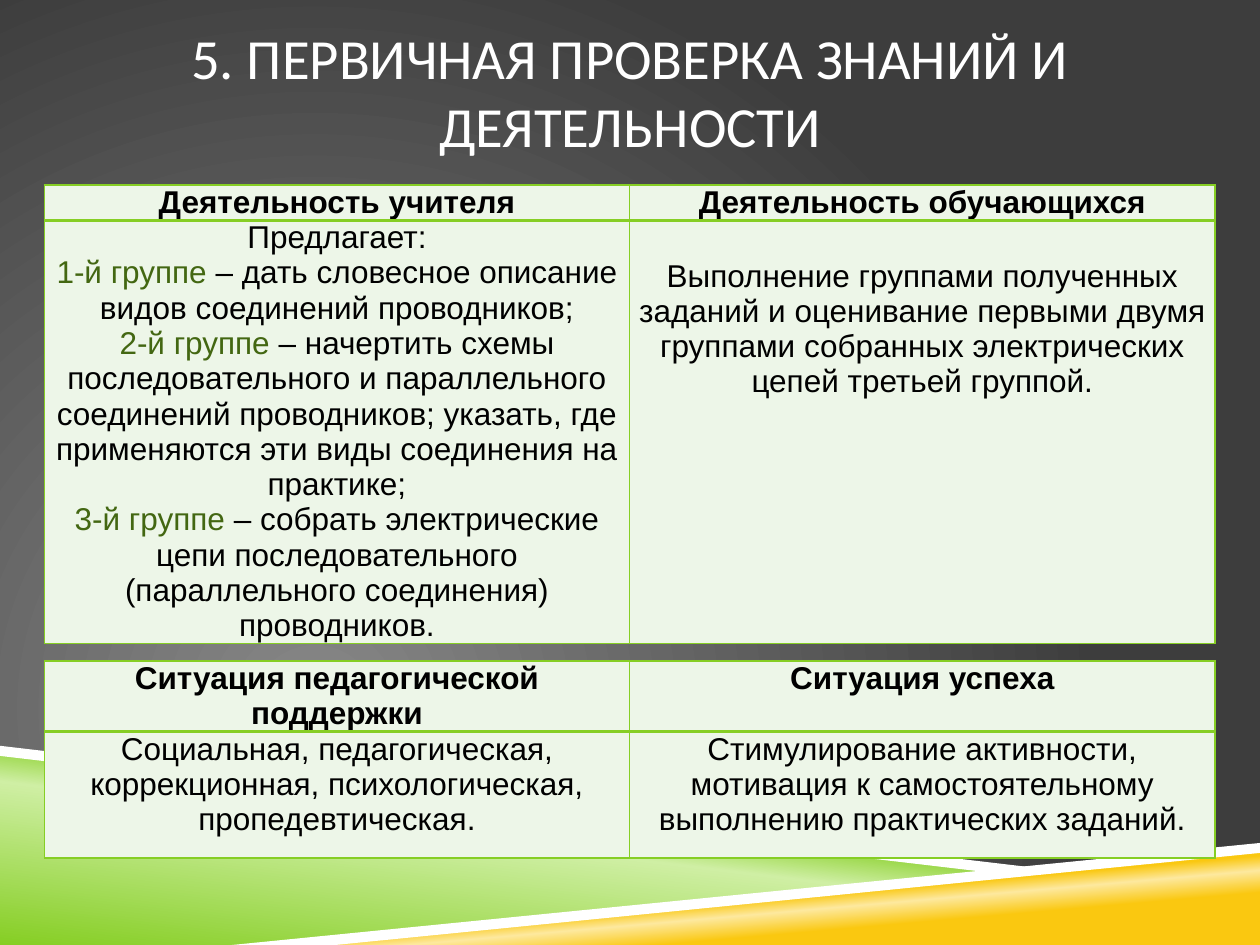
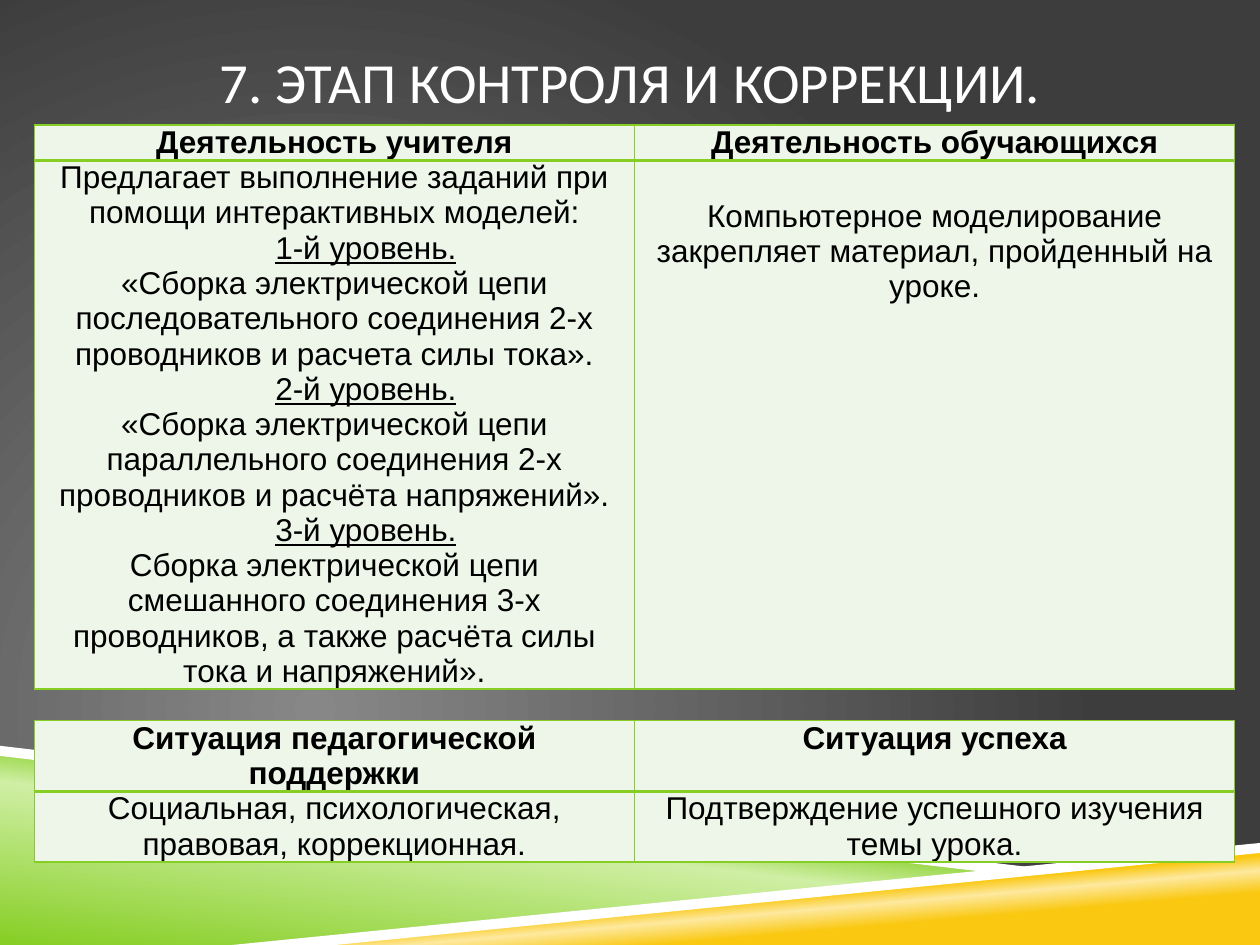
import lxml.etree
import pptx
import pptx.dml.color
import pptx.enum.text
import pptx.oxml
import pptx.oxml.ns
import pptx.util

Pt = pptx.util.Pt
RGBColor = pptx.dml.color.RGBColor

WHITE = RGBColor(0xFF, 0xFF, 0xFF)
BLACK = RGBColor(0x00, 0x00, 0x00)
GREEN = RGBColor(0x86, 0xCE, 0x24)
LIGHT_GREEN = RGBColor(0xCF, 0xEF, 0xA4)
DARK_GREEN = RGBColor(0x43, 0x67, 0x12)
PALE_GREEN = RGBColor(0xED, 0xF6, 0xE8)
YELLOW = RGBColor(0xFA, 0xC8, 0x10)
LIGHT_YELLOW = RGBColor(0xFD, 0xE9, 0x9F)
GREY = RGBColor(0x87, 0x87, 0x87)
DARK_GREY = RGBColor(0x3D, 0x3D, 0x3D)

WIDTH, HEIGHT = 720, 540
LEVEL_INDENT = 36
EMPTY_LINE = 22

GREEN_WEDGE = [(0, 429.8), (570.2, 498.2), (144, 540), (0, 540)]
YELLOW_WEDGE = [(142.6, 540), (720, 483.8), (720, 540)]
UPPER_STRIPE = [(0, 426.2), (0, 432), (568.8, 499), (599, 496.8)]
LOWER_STRIPE = [(720, 481.7), (132.5, 540), (191.5, 540), (720, 487.4)]


def linear(angle):
    return f'<a:lin ang="{angle * 60000}" scaled="0"/>'


CIRCLE = ('<a:path path="circle"><a:fillToRect l="50000" t="100000" '
          'r="100000" b="50000"/></a:path>')


def set_gradient(fill, element, stops, direction):
    """Fill with (percent, colour) stops along a direction given as XML."""
    fill.gradient()
    gradient = next(element.iter(pptx.oxml.ns.qn("a:gradFill")))
    stop_xml = "".join(
        f'<a:gs pos="{percent * 1000}"><a:srgbClr val="{colour}"/></a:gs>'
        for percent, colour in stops)
    source = pptx.oxml.parse_xml(
        f'<a:gradFill {pptx.oxml.ns.nsdecls("a")}>'
        f"<a:gsLst>{stop_xml}</a:gsLst>{direction}</a:gradFill>")
    gradient[:] = list(source)


def add_text(paragraph, text, font="Arial", size=18, colour=BLACK,
             bold=False, underline=False):
    run = paragraph.add_run()
    run.text = text
    run.font.name = font
    run.font.size = Pt(size)
    run.font.color.rgb = colour
    run.font.bold = bold
    run.font.underline = underline


def set_borders(cell, widths):
    """Draw green cell borders; widths are left, right, top, bottom."""
    properties = cell._tc.get_or_add_tcPr()
    for side, width in zip("LRTB", widths):
        line = lxml.etree.SubElement(
            properties, pptx.oxml.ns.qn(f"a:ln{side}"), w=str(Pt(width)))
        fill = lxml.etree.SubElement(line, pptx.oxml.ns.qn("a:solidFill"))
        lxml.etree.SubElement(
            fill, pptx.oxml.ns.qn("a:srgbClr"), val=str(GREEN))


class Deck:
    def __init__(self):
        self.presentation = pptx.Presentation()
        self.presentation.slide_width = Pt(WIDTH)
        self.presentation.slide_height = Pt(HEIGHT)
        self.layout = self.presentation.slide_layouts[5]
        self.slide = None

    def decorate_layout(self):
        """Move the shared wedges from the current slide to its layout."""
        background = self.layout.background
        set_gradient(background.fill, self.layout.element,
                     [(0, GREY), (100, DARK_GREY)], CIRCLE)
        green, yellow, *stripes = wedges = [
            self.polygon(points) for points in
            (GREEN_WEDGE, YELLOW_WEDGE, UPPER_STRIPE, LOWER_STRIPE)]
        set_gradient(green.fill, green.element,
                     [(0, GREEN), (52, LIGHT_GREEN), (66, GREEN)], linear(277))
        set_gradient(yellow.fill, yellow.element,
                     [(28, YELLOW), (40, LIGHT_YELLOW), (48, YELLOW)],
                     linear(265))
        for stripe in stripes:
            stripe.fill.solid()
            stripe.fill.fore_color.rgb = WHITE
        for index, wedge in enumerate(wedges):
            wedge.element.nvSpPr.cNvPr.set("id", str(100 + index))
            self.layout.shapes.element.insert(2 + index, wedge.element)

    def polygon(self, points):
        first, *others = [(Pt(x), Pt(y)) for x, y in points]
        builder = self.slide.shapes.build_freeform(*first)
        builder.add_line_segments(others, close=True)
        shape = builder.convert_to_shape()
        shape.shadow.inherit = False
        shape.line.fill.background()
        return shape

    def add_slide(self, title, top, height):
        self.slide = self.presentation.slides.add_slide(self.layout)
        shape = self.slide.shapes.title
        shape.left, shape.top = Pt(54), Pt(top)
        shape.width, shape.height = Pt(WIDTH - 2 * 54), Pt(height)
        frame = shape.text_frame
        frame.word_wrap = True
        frame.auto_size = pptx.enum.text.MSO_AUTO_SIZE.NONE
        frame.vertical_anchor = pptx.enum.text.MSO_ANCHOR.MIDDLE
        frame.margin_left = frame.margin_right = 0
        frame.margin_top = frame.margin_bottom = Pt(3.6)
        paragraph = frame.paragraphs[0]
        paragraph.alignment = pptx.enum.text.PP_ALIGN.CENTER
        add_text(paragraph, title, font="Calibri", size=32.4, colour=WHITE)

    def table(self, left, top, column_width, row_heights, headings, bodies,
              right_offset=0):
        """Add a heading row and a body row; a body is a list of paragraphs."""
        table = self.slide.shapes.add_table(
            2, 2, Pt(left), Pt(top), Pt(2 * column_width),
            Pt(sum(row_heights))).table
        table.horz_banding = False
        table.first_row = False
        for column in table.columns:
            column.width = Pt(column_width)
        for row, height in zip(table.rows, row_heights):
            row.height = Pt(height)
        for column, (heading, body) in enumerate(zip(headings, bodies)):
            self.fill_cell(table.cell(0, column), [[(heading, {"bold": True})]],
                           (1, 1, 1, 2))
            self.fill_cell(table.cell(1, column), body, (1, 1, 2, 1))
        table.cell(1, 1).margin_top = Pt(right_offset)

    def fill_cell(self, cell, paragraphs, borders):
        set_borders(cell, borders)
        cell.fill.solid()
        cell.fill.fore_color.rgb = PALE_GREEN
        cell.margin_left = cell.margin_right = Pt(5)
        cell.margin_top = cell.margin_bottom = 0
        frame = cell.text_frame
        for index, runs in enumerate(paragraphs):
            paragraph = frame.add_paragraph() if index else frame.paragraphs[0]
            paragraph.alignment = pptx.enum.text.PP_ALIGN.CENTER
            for text, style in runs:
                add_text(paragraph, text, **style)
                if style.get("underline"):
                    paragraph._p.get_or_add_pPr().set(
                        "marL", str(Pt(LEVEL_INDENT)))


def plain(text):
    return [(text, {})]


def group_task(number, task):
    return [(f"{number}-й группе ", {"colour": DARK_GREEN}), (task, {})]


def level(number):
    return [(f"{number}-й уровень.", {"underline": True})]


ACTIVITIES = ("Деятельность учителя", "Деятельность обучающихся")
SITUATIONS = ("Ситуация педагогической поддержки", "Ситуация успеха")


def main():
    deck = Deck()

    deck.add_slide("5. ПЕРВИЧНАЯ ПРОВЕРКА ЗНАНИЙ И ДЕЯТЕЛЬНОСТИ", 10, 84)
    deck.decorate_layout()
    deck.table(25.3, 105.6, 334.5, (20.2, 241.5), ACTIVITIES, (
        [plain("Предлагает:"),
         group_task(1, "– дать словесное описание видов соединений "
                       "проводников;"),
         group_task(2, "– начертить схемы последовательного и параллельного "
                       "соединений проводников; указать, где применяются эти "
                       "виды соединения на практике;"),
         group_task(3, "– собрать электрические цепи последовательного "
                       "(параллельного соединения) проводников.")],
        [plain("Выполнение группами полученных заданий и оценивание первыми "
               "двумя группами собранных электрических цепей третьей "
               "группой.")]), right_offset=EMPTY_LINE)
    deck.table(25.3, 377.8, 334.5, (40.2, 72.3), SITUATIONS, (
        [plain("Социальная, педагогическая, коррекционная, психологическая, "
               "пропедевтическая.")],
        [plain("Стимулирование активности, мотивация к самостоятельному "
               "выполнению практических заданий.")]))

    deck.add_slide("7. ЭТАП КОНТРОЛЯ И КОРРЕКЦИИ.", 21.6, 49.7)
    deck.table(19.6, 71.3, 343, (20.2, 302), ACTIVITIES, (
        [plain("Предлагает выполнение заданий при помощи интерактивных "
               "моделей:"),
         level(1),
         plain("«Сборка электрической цепи последовательного соединения 2-х "
               "проводников и расчета силы тока»."),
         level(2),
         plain("«Сборка электрической цепи параллельного соединения 2-х "
               "проводников и расчёта напряжений»."),
         level(3),
         plain("Сборка электрической цепи смешанного соединения 3-х "
               "проводников, а также расчёта силы тока и напряжений».")],
        [plain("Компьютерное моделирование закрепляет материал, пройденный "
               "на уроке.")]), right_offset=EMPTY_LINE)
    deck.table(19.6, 411.8, 343, (40.2, 40.2), SITUATIONS, (
        [plain("Социальная, психологическая, правовая, коррекционная.")],
        [plain("Подтверждение успешного изучения темы урока.")]))

    deck.presentation.save("out.pptx")


if __name__ == "__main__":
    main()
